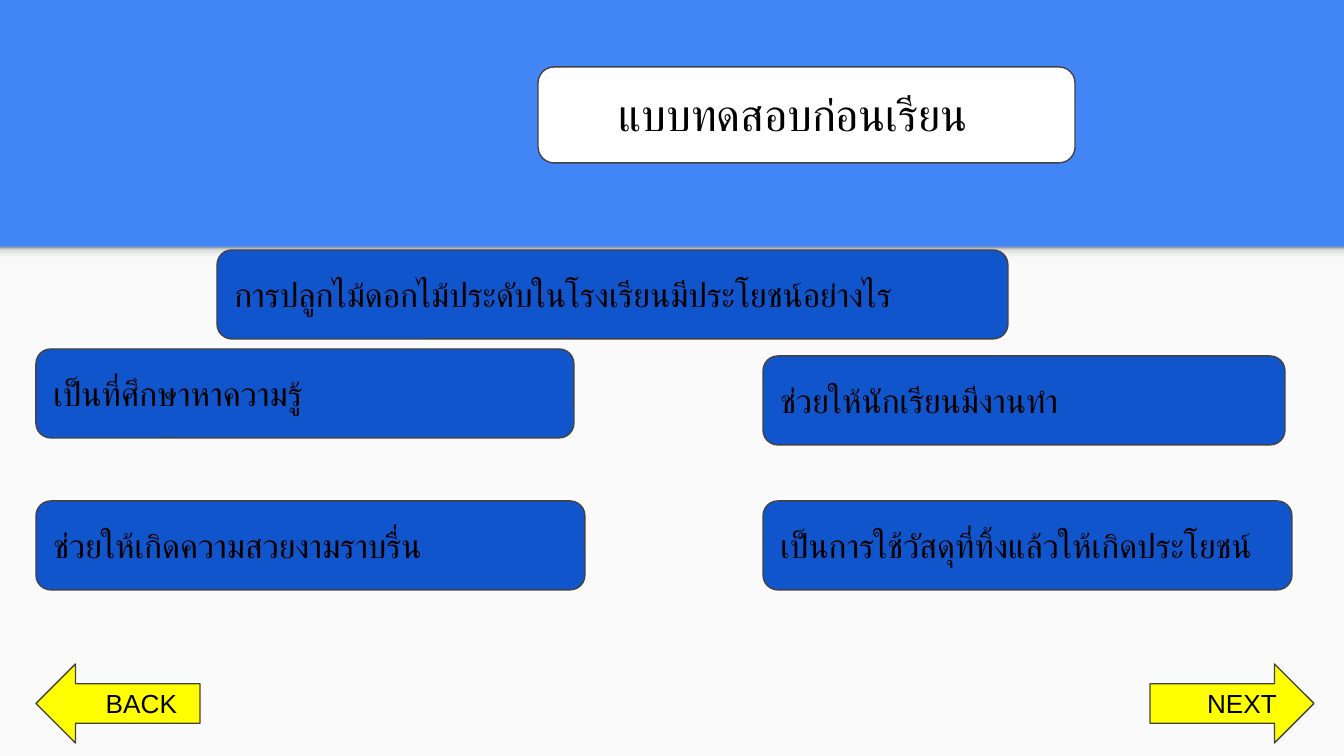
from dataclasses import dataclass

import lxml.etree
import pptx
import pptx.dml.color
import pptx.enum.shapes
import pptx.enum.text
import pptx.oxml.ns
import pptx.util

RGBColor = pptx.dml.color.RGBColor
Shape = pptx.enum.shapes.MSO_SHAPE
Align = pptx.enum.text.PP_ALIGN
Anchor = pptx.enum.text.MSO_ANCHOR

WIDTH, HEIGHT = 1344, 756
EMU_PER_PX = pptx.util.Inches(10) / WIDTH
INSET = 13
BAND_TOP = 247

SKY_BLUE = RGBColor(0x42, 0x85, 0xF4)
DEEP_BLUE = RGBColor(0x11, 0x55, 0xCC)
PAPER = RGBColor(0xFA, 0xFA, 0xFA)
WHITE = RGBColor(0xFF, 0xFF, 0xFF)
YELLOW = RGBColor(0xFF, 0xFF, 0x00)
OUTLINE = RGBColor(0x42, 0x42, 0x42)
BLACK = RGBColor(0x00, 0x00, 0x00)
SHADOW_STOPS = ((0, "F9F9F9"), (36, "F9F9F9"), (80, "DEDEDE"), (100, "999999"))


@dataclass(frozen=True)
class Box:
    left: int
    top: int
    width: int
    height: int


@dataclass(frozen=True)
class Label:
    text: str
    font: str
    size: int
    left_inset: int = INSET
    align: Align = Align.LEFT
    anchor: Anchor = Anchor.MIDDLE


@dataclass(frozen=True)
class Card:
    text: str
    left: int
    top: int
    width: int


@dataclass(frozen=True)
class Arrow:
    text: str
    kind: Shape
    left: int
    left_inset: int


CARDS = (
    Card("เป็นการใช้วัสดุที่ทิ้งแล้วให้เกิดประโยชน์", 763, 501, 529),
    Card("ช่วยให้เกิดความสวยงามราบรื่น", 36, 501, 549),
    Card("ช่วยให้นักเรียนมีงานทำ", 763, 356, 522),
    Card("เป็นที่ศึกษาหาความรู้", 36, 349, 538),
    Card("การปลูกไม้ดอกไม้ประดับในโรงเรียนมีประโยชน์อย่างไร", 217, 250, 791),
)
ARROWS = (
    Arrow("BACK", Shape.LEFT_ARROW, 36, 50),
    Arrow("NEXT", Shape.RIGHT_ARROW, 1150, 57),
)


def px(length: int) -> int:
    return round(length * EMU_PER_PX)


def bounds(box: Box) -> tuple[int, int, int, int]:
    return px(box.left), px(box.top), px(box.width), px(box.height)


def add_filled(slide, kind: Shape, box: Box, color: RGBColor, outlined: bool = True):
    shape = slide.shapes.add_shape(kind, *bounds(box))
    shape.shadow.inherit = False
    shape.fill.solid()
    shape.fill.fore_color.rgb = color
    if outlined:
        shape.line.color.rgb = OUTLINE
        shape.line.width = pptx.util.Pt(0.75)
    else:
        shape.line.fill.background()
    return shape


def write_label(shape, label: Label) -> None:
    text_frame = shape.text_frame
    text_frame.text = label.text
    text_frame.word_wrap = True
    text_frame.vertical_anchor = label.anchor
    text_frame.margin_left = px(label.left_inset)
    text_frame.margin_right = px(INSET)
    text_frame.margin_top = text_frame.margin_bottom = px(INSET)
    paragraph = text_frame.paragraphs[0]
    paragraph.alignment = label.align
    font = paragraph.runs[0].font
    font.name = label.font
    font.size = pptx.util.Pt(label.size)
    font.color.rgb = BLACK
    # Thai takes its typeface from the complex-script setting
    properties = paragraph.runs[0]._r.get_or_add_rPr()
    lxml.etree.SubElement(properties, pptx.oxml.ns.qn("a:cs"), typeface=label.font)


def fade_upward(shape) -> None:
    shape.fill.gradient()
    shape.fill.gradient_angle = 90
    stops = shape._element.spPr.find(".//" + pptx.oxml.ns.qn("a:gsLst"))
    for stop in list(stops):
        stops.remove(stop)
    for percent, color in SHADOW_STOPS:
        stop = lxml.etree.SubElement(stops, pptx.oxml.ns.qn("a:gs"), pos=str(percent * 1000))
        lxml.etree.SubElement(stop, pptx.oxml.ns.qn("a:srgbClr"), val=color)


def main() -> None:
    presentation = pptx.Presentation()
    presentation.slide_width = px(WIDTH)
    presentation.slide_height = px(HEIGHT)
    slide = presentation.slides.add_slide(presentation.slide_layouts[6])

    # Blue header above a pale body with a soft shadow edge
    slide.background.fill.solid()
    slide.background.fill.fore_color.rgb = SKY_BLUE
    body = Box(0, BAND_TOP, WIDTH, HEIGHT - BAND_TOP)
    add_filled(slide, Shape.RECTANGLE, body, PAPER, outlined=False)
    edge = Box(0, BAND_TOP, WIDTH, 16)
    fade_upward(add_filled(slide, Shape.RECTANGLE, edge, PAPER, outlined=False))

    # Title
    add_filled(slide, Shape.ROUNDED_RECTANGLE, Box(538, 67, 537, 96), WHITE)
    title = slide.shapes.add_textbox(*bounds(Box(77, 40, 1208, 113)))
    write_label(title, Label("แบบทดสอบก่อนเรียน", "Courier New", 24, 237,
                             Align.CENTER, Anchor.BOTTOM))

    # Question and answers
    for card in CARDS:
        box = Box(card.left, card.top, card.width, 89)
        shape = add_filled(slide, Shape.ROUNDED_RECTANGLE, box, DEEP_BLUE)
        write_label(shape, Label(card.text, "Comic Neue", 18))

    # Navigation arrows
    for arrow in ARROWS:
        shape = add_filled(slide, arrow.kind, Box(arrow.left, 664, 164, 79), YELLOW)
        write_label(shape, Label(arrow.text, "Arial", 14, arrow.left_inset))

    presentation.save("out.pptx")


if __name__ == "__main__":
    main()
